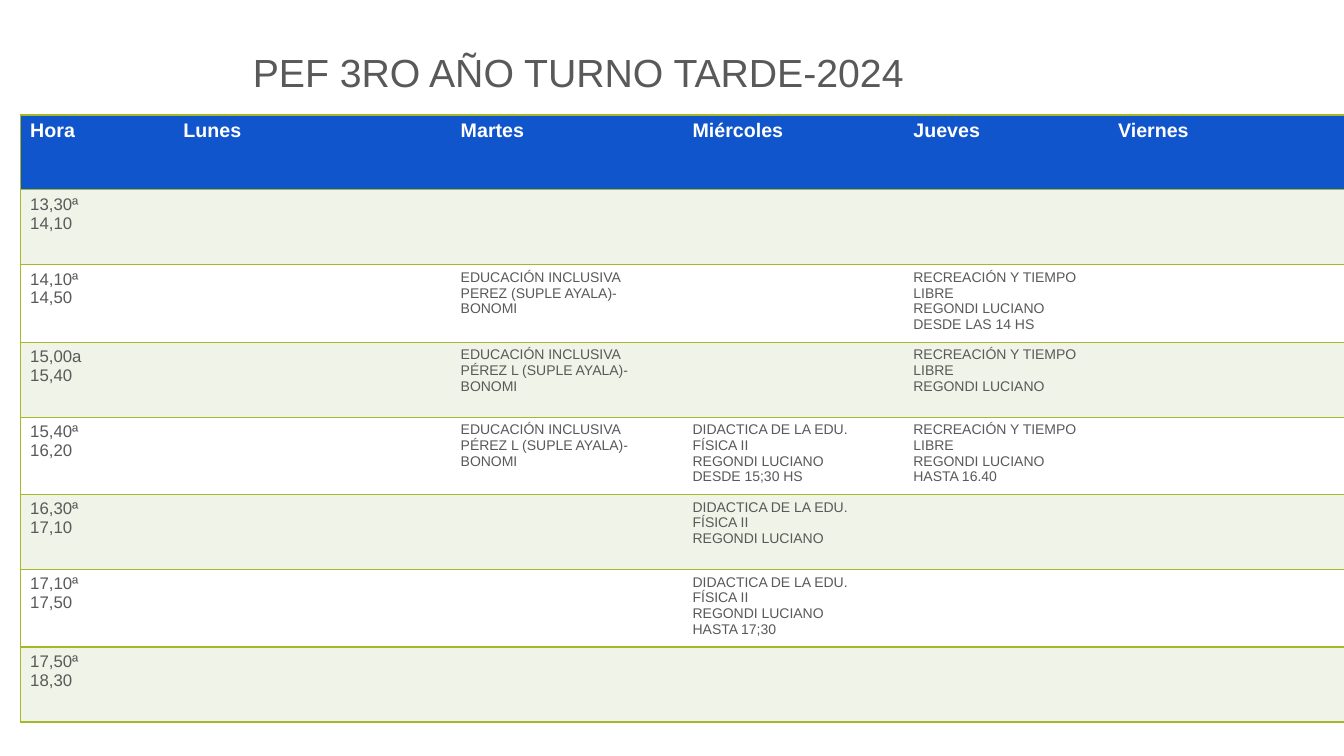
from lxml.etree import SubElement
from pptx import Presentation
from pptx.dml.color import RGBColor
from pptx.enum.text import MSO_ANCHOR
from pptx.oxml.ns import qn
from pptx.util import Inches, Pt

GRAY = RGBColor(0x59, 0x59, 0x59)
WHITE = RGBColor(0xFF, 0xFF, 0xFF)
BLUE = RGBColor(0x11, 0x55, 0xCC)
PALE_GREEN = RGBColor(0xF0, 0xF3, 0xE7)
GREEN = RGBColor(0xA6, 0xB7, 0x27)

FONT = "Arial"
PLAIN_TABLE_STYLE = "{2D5ABB26-0587-4C30-8999-92F81FD0307C}"
COLUMN_WIDTHS = [1.52, 2.75, 2.3, 2.19, 2.03, 2.35]
TABLE_HEIGHT = 5.95

DAYS = ["Hora", "Lunes", "Martes", "Miércoles", "Jueves", "Viernes"]
HOURS = [
    "13,30ª\n14,10",
    "14,10ª\n14,50",
    "15,00a\n15,40",
    "15,40ª\n16,20",
    "16,30ª\n17,10",
    "17,10ª\n17,50",
    "17,50ª\n18,30",
]
INCLUSIVE = "EDUCACIÓN INCLUSIVA\nPÉREZ L (SUPLE AYALA)-BONOMI"
RECREATION = "RECREACIÓN Y TIEMPO LIBRE\nREGONDI LUCIANO"
DIDACTICS = "DIDACTICA DE LA EDU. FÍSICA II\nREGONDI LUCIANO"
CLASSES = {
    (2, 2): "EDUCACIÓN INCLUSIVA\nPEREZ (SUPLE AYALA)-BONOMI",
    (3, 2): INCLUSIVE,
    (4, 2): INCLUSIVE,
    (4, 3): DIDACTICS + "\nDESDE 15;30 HS",
    (5, 3): DIDACTICS,
    (6, 3): DIDACTICS + "\nHASTA 17;30",
    (2, 4): RECREATION + "\nDESDE LAS 14 HS",
    (3, 4): RECREATION,
    (4, 4): RECREATION + "\nHASTA 16.40",
}


def write_lines(frame, text, size, color, bold=False):
    """Write each line of text as a paragraph with one run."""
    for index, line in enumerate(text.split("\n")):
        paragraph = frame.add_paragraph() if index else frame.paragraphs[0]
        run = paragraph.add_run()
        run.text = line
        run.font.name = FONT
        run.font.size = Pt(size)
        run.font.bold = bold
        run.font.color.rgb = color


def add_title(slide, text):
    """Add the heading, anchored to the bottom of its box."""
    heading = slide.shapes.add_textbox(
        Inches(2.41), Inches(0.11), Inches(10.25), Inches(0.89)
    )
    frame = heading.text_frame
    frame.word_wrap = True
    frame.vertical_anchor = MSO_ANCHOR.BOTTOM
    write_lines(frame, text, 28, GRAY)
    frame.paragraphs[0].line_spacing = 0.9


def add_borders(cell, sides):
    """Draw green borders on the given sides of a cell."""
    properties = cell._tc.get_or_add_tcPr()
    for side in sides:
        border = SubElement(properties, qn(f"a:ln{side}"), w=str(Pt(1)))
        fill = SubElement(border, qn("a:solidFill"))
        SubElement(fill, qn("a:srgbClr"), val=str(GREEN))


def style_cell(cell, sides, color):
    """Give a cell its borders and background."""
    add_borders(cell, sides)
    cell.fill.solid()
    cell.fill.fore_color.rgb = color


def add_timetable(slide):
    """Add the weekly timetable with banded rows."""
    row_count, column_count = len(HOURS) + 1, len(DAYS)
    timetable = slide.shapes.add_table(
        row_count, column_count, Inches(0.2), Inches(1.14),
        Inches(sum(COLUMN_WIDTHS)), Inches(TABLE_HEIGHT),
    ).table
    timetable._tbl.tblPr.find(qn("a:tableStyleId")).text = PLAIN_TABLE_STYLE
    timetable.first_row = timetable.horz_banding = False

    for column, width in zip(timetable.columns, COLUMN_WIDTHS):
        column.width = Inches(width)
    for row_index, row in enumerate(timetable.rows):
        row.height = Inches(TABLE_HEIGHT / row_count)
        band = PALE_GREEN if row_index % 2 else WHITE
        for day_index, cell in enumerate(row.cells):
            left = "L" if day_index == 0 else ""
            right = "R" if day_index == column_count - 1 else ""
            style_cell(cell, left + right + "TB", band if row_index else BLUE)
            if row_index == 0:
                write_lines(cell.text_frame, DAYS[day_index], 14, WHITE, True)
            elif day_index == 0:
                write_lines(cell.text_frame, HOURS[row_index - 1], 12, GRAY)
            elif (row_index, day_index) in CLASSES:
                lesson = CLASSES[row_index, day_index]
                write_lines(cell.text_frame, lesson, 10, GRAY)


def main():
    """Build the timetable slide and save it."""
    presentation = Presentation()
    presentation.slide_width = Inches(13.33)
    presentation.slide_height = Inches(7.5)
    slide = presentation.slides.add_slide(presentation.slide_layouts[6])
    add_title(slide, "PEF 3RO AÑO TURNO TARDE-2024")
    add_timetable(slide)
    presentation.save("out.pptx")


if __name__ == "__main__":
    main()
